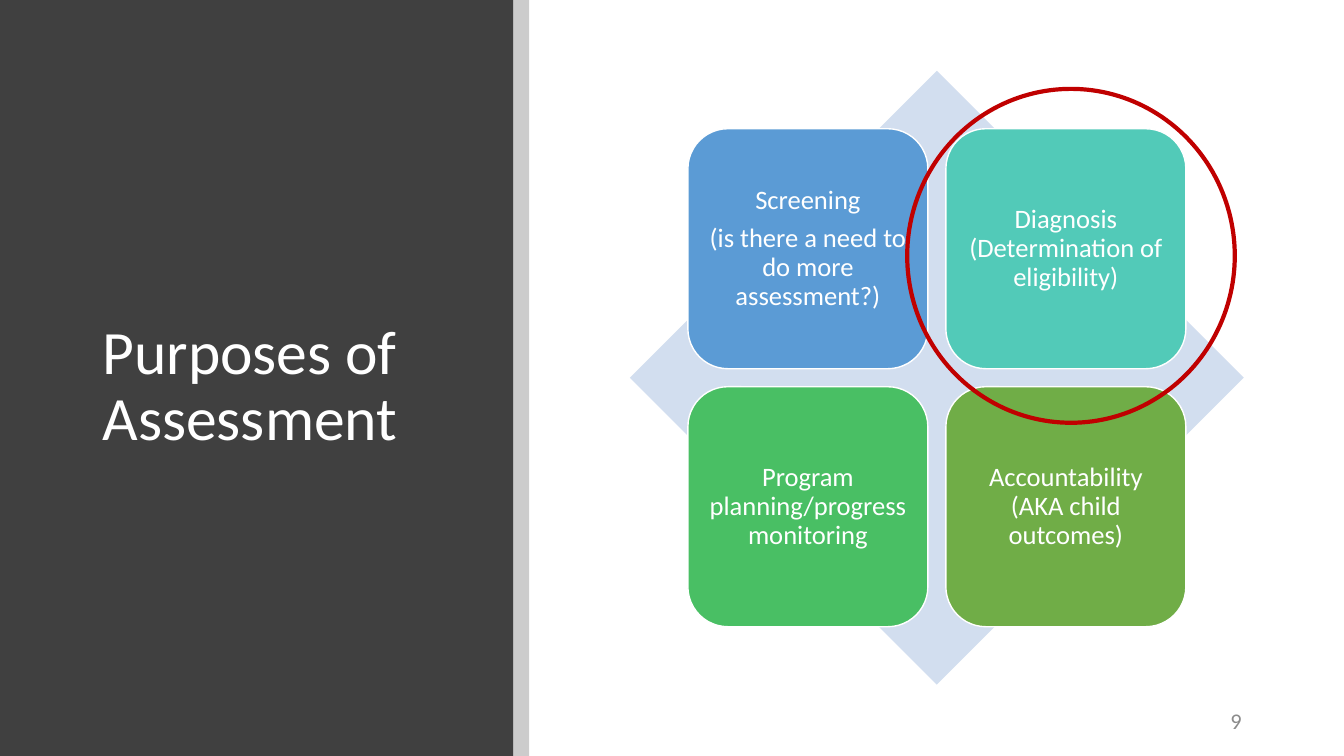
from lxml.etree import SubElement
from pptx import Presentation
from pptx.dml.color import RGBColor
from pptx.enum.shapes import MSO_SHAPE as Preset
from pptx.enum.text import MSO_ANCHOR as Anchor, MSO_AUTO_SIZE as AutoSize, PP_ALIGN as Align
from pptx.oxml.ns import qn
from pptx.util import Pt

WHITE = RGBColor(0xFF, 0xFF, 0xFF)
BLACK = RGBColor(0x00, 0x00, 0x00)
CHARCOAL = RGBColor(0x40, 0x40, 0x40)
PALE_BLUE = RGBColor(0xD2, 0xDE, 0xEF)
BLUE = RGBColor(0x5B, 0x9B, 0xD5)
TEAL = RGBColor(0x52, 0xCA, 0xB8)
GREEN = RGBColor(0x49, 0xBF, 0x64)
OLIVE = RGBColor(0x70, 0xAD, 0x47)
RED = RGBColor(0xC0, 0x00, 0x00)
GRAY = RGBColor(0x8C, 0x8C, 0x8C)

TITLE = "Purposes of Assessment"
PAGE_NUMBER = "9"
PURPOSES = [
    (BLUE, ["Screening", "(is there a need to do more assessment?)"]),
    (TEAL, ["Diagnosis (Determination of eligibility)"]),
    (GREEN, ["Program planning/progress monitoring"]),
    (OLIVE, ["Accountability (AKA child outcomes)"]),
]

FONT = "Calibri"
WIDTH, HEIGHT = 960, 540
PANEL_WIDTH, BAND_WIDTH = 366.5, 11.5
CENTER_X, CENTER_Y = 669.2, 269.8
DIAMOND = 438.5
CARD, GAP = 171.4, 12.9
CARD_INSET = 5.76


def add_figure(page, preset, left, top, width, height, fill=None, line=None, weight=1):
    figure = page.shapes.add_shape(preset, Pt(left), Pt(top), Pt(width), Pt(height))
    figure.shadow.inherit = False
    if fill is None:
        figure.fill.background()
    else:
        figure.fill.solid()
        figure.fill.fore_color.rgb = fill
    if line is None:
        figure.line.fill.background()
    else:
        figure.line.color.rgb = line
        figure.line.width = Pt(weight)
    return figure


def write(box, lines, size, color, align, spacing=1.0, after=0):
    frame = box.text_frame
    frame.text = "\n".join(lines)
    frame.word_wrap = True
    frame.auto_size = AutoSize.NONE
    frame.vertical_anchor = Anchor.MIDDLE
    for para in frame.paragraphs:
        para.alignment = align
        para.line_spacing = spacing
        para.space_after = Pt(after)
        para.font.name = FONT
        para.font.size = Pt(size)
        para.font.color.rgb = color


def add_side_panel(page):
    title = page.shapes.title
    panel = add_figure(page, Preset.RECTANGLE, 0, 0, PANEL_WIDTH, HEIGHT, CHARCOAL)
    title.element.addprevious(panel.element)  # the panel lies behind the title
    title.left, title.top, title.width, title.height = Pt(66), Pt(64), Pt(263), Pt(425.5)
    write(title, [TITLE], 44, WHITE, Align.LEFT, 0.9)
    band = add_figure(page, Preset.RECTANGLE, PANEL_WIDTH, 0, BAND_WIDTH, HEIGHT, BLACK)
    tint = band.element.spPr.find(qn("a:solidFill"))[0]
    SubElement(tint, qn("a:alpha"), val="20000")


def add_matrix(page):
    add_figure(page, Preset.DIAMOND, CENTER_X - DIAMOND / 2, CENTER_Y - DIAMOND / 2,
               DIAMOND, DIAMOND, PALE_BLUE)
    pitch = CARD + GAP
    left = CENTER_X - GAP / 2 - CARD
    top = CENTER_Y - GAP / 2 - CARD
    for index, (color, lines) in enumerate(PURPOSES):
        row, column = divmod(index, 2)
        card = add_figure(page, Preset.ROUNDED_RECTANGLE, left + column * pitch,
                          top + row * pitch, CARD, CARD, color, WHITE)
        frame = card.text_frame
        frame.margin_left = frame.margin_right = Pt(CARD_INSET)
        frame.margin_top = frame.margin_bottom = Pt(CARD_INSET)
        write(card, lines, 19, WHITE, Align.CENTER, 0.9, 6.65)


def main():
    deck = Presentation()
    deck.slide_width, deck.slide_height = Pt(WIDTH), Pt(HEIGHT)
    page = deck.slides.add_slide(deck.slide_layouts[5])
    add_side_panel(page)
    add_matrix(page)
    add_figure(page, Preset.OVAL, 648, 63.5, 234, 238.5, line=RED, weight=3)
    number = page.shapes.add_textbox(Pt(678), Pt(500.5), Pt(216), Pt(28.75))
    write(number, [PAGE_NUMBER], 16, GRAY, Align.RIGHT)
    deck.save("out.pptx")


if __name__ == "__main__":
    main()
